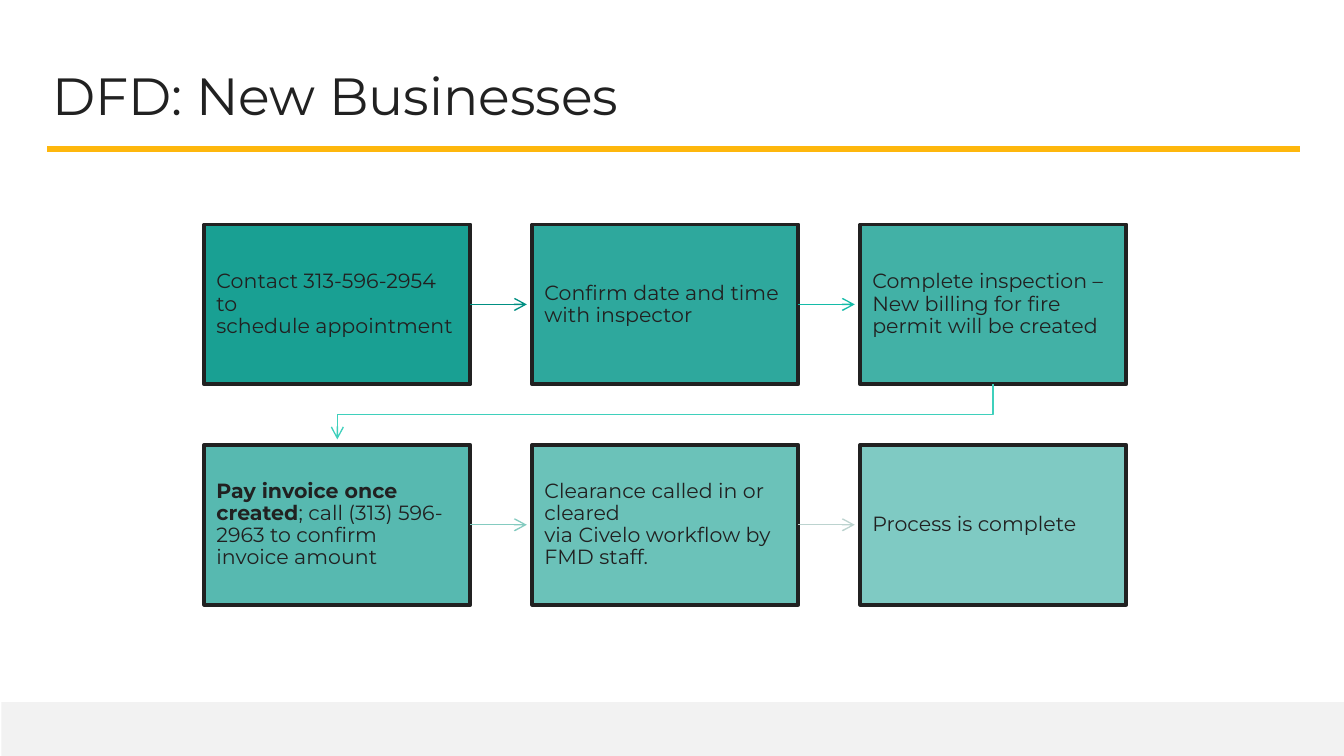
from dataclasses import dataclass

from lxml import etree
from pptx import Presentation
from pptx.dml.color import RGBColor
from pptx.enum import shapes, text
from pptx.oxml.ns import qn
from pptx import util as u

FONT = "Montserrat"
INK = "212121"
TEAL = "009688"
PAGE_WIDTH = 10
PAGE_HEIGHT = PAGE_WIDTH * 9 / 16
LEFT, TOP = 1.52, 1.67
COLUMN_STEP, ROW_STEP = 2.44, 1.64
BOX_WIDTH, BOX_HEIGHT = 1.98, 1.19
COLUMNS = 3
ARROW_GAP = 0.04
RIGHT_SIDE = 3


@dataclass(frozen=True)
class Step:
    """A process step; "~" in its words stands for a no-break space."""
    words: str
    arrow_color: str = ""
    bold_start: str = ""


STEPS = [
    Step("Contact 313-596-2954 to schedule~appointment", "008F82"),
    Step("Confirm date and time with~inspector", "14BBA8"),
    Step("Complete inspection – New billing for fire permit will be~created", "3FD0BC"),
    Step("; call (313) 596-2963 to confirm invoice~amount", "84CBC0",
         bold_start="Pay invoice once created"),
    Step("Clearance called in or cleared via~Civelo~workflow by FMD~staff.", "BCD3CF"),
    Step("Process is~complete"),
]


def rgb(color: str) -> RGBColor:
    return RGBColor.from_string(color)


def add_span(para, words: str, *, size: float, bold: bool = False) -> None:
    span = para.add_run()
    span.text = words.replace("~", chr(160))
    span.font.name = FONT
    span.font.size = u.Pt(size)
    span.font.bold = bold
    span.font.color.rgb = rgb(INK)


def set_margins(frame, inches: float) -> None:
    frame.margin_left = frame.margin_right = u.Inches(inches)
    frame.margin_top = frame.margin_bottom = u.Inches(inches)


def add_rectangle(page, left: float, top: float, width: float, height: float, color: str):
    box = page.shapes.add_shape(
        shapes.MSO_SHAPE.RECTANGLE, *map(u.Inches, (left, top, width, height)))
    box.shadow.inherit = False
    box.fill.solid()
    box.fill.fore_color.rgb = rgb(color)
    box.line.fill.background()
    return box


def add_line(page, start: tuple, end: tuple, color: str, width: float):
    line = page.shapes.add_connector(
        shapes.MSO_CONNECTOR.STRAIGHT, *map(u.Inches, start + end))
    line.line.color.rgb = rgb(color)
    line.line.width = u.Pt(width)
    etree.SubElement(line._element.spPr, qn("a:effectLst"))
    return line


def add_arrowhead(line) -> None:
    etree.SubElement(line.line._get_or_add_ln(), qn("a:tailEnd"), type="arrow")


def cell_origin(index: int) -> tuple[float, float]:
    row, column = divmod(index, COLUMNS)
    return LEFT + column * COLUMN_STEP, TOP + row * ROW_STEP


def add_step(page, index: int, step: Step):
    box = add_rectangle(page, *cell_origin(index), BOX_WIDTH, BOX_HEIGHT, TEAL)
    opacity = 90 - 8 * index
    fill_color = box._element.spPr.find(qn("a:solidFill"))[0]
    etree.SubElement(fill_color, qn("a:alpha"), val=str(opacity * 1000))
    box.line.color.rgb = rgb(INK)
    box.line.width = u.Pt(2)

    frame = box.text_frame
    frame.word_wrap = True
    frame.vertical_anchor = text.MSO_ANCHOR.MIDDLE
    set_margins(frame, 0.09)
    para = frame.paragraphs[0]
    para.alignment = text.PP_ALIGN.LEFT
    para.line_spacing = 0.9
    if step.bold_start:
        add_span(para, step.bold_start, size=11, bold=True)
    add_span(para, step.words, size=11)
    return box


def add_arrow_across(page, index: int, box, color: str) -> None:
    """Join a box to the next one in its row, stopping just short of it."""
    left, top = cell_origin(index)
    middle = top + BOX_HEIGHT / 2
    arrow = add_line(page, (left + BOX_WIDTH, middle),
                     (left + COLUMN_STEP - ARROW_GAP, middle), color, 0.75)
    arrow.begin_connect(box, RIGHT_SIDE)
    add_arrowhead(arrow)


def add_arrow_to_next_row(page, index: int, color: str) -> None:
    from_left, from_top = cell_origin(index)
    to_left, to_top = cell_origin(index + 1)
    start_x, end_x = from_left + BOX_WIDTH / 2, to_left + BOX_WIDTH / 2
    start_y = from_top + BOX_HEIGHT
    turn_y = (start_y + to_top) / 2
    corners = [(start_x, turn_y), (end_x, turn_y), (end_x, to_top - ARROW_GAP)]
    builder = page.shapes.build_freeform(u.Inches(start_x), u.Inches(start_y))
    builder.add_line_segments(
        [(u.Inches(x), u.Inches(y)) for x, y in corners], close=False)
    arrow = builder.convert_to_shape()
    arrow.shadow.inherit = False
    arrow.fill.background()
    arrow.line.color.rgb = rgb(color)
    arrow.line.width = u.Pt(0.75)
    add_arrowhead(arrow)


def add_title(page, words: str) -> None:
    title = page.shapes.title
    title.left, title.top, title.width, title.height = map(
        u.Inches, (0.29, 0.37, 9.32, 0.63))
    frame = title.text_frame
    frame.auto_size = text.MSO_AUTO_SIZE.NONE
    frame.vertical_anchor = text.MSO_ANCHOR.TOP
    set_margins(frame, 0.1)
    para = frame.paragraphs[0]
    para.alignment = text.PP_ALIGN.LEFT
    add_span(para, words, size=28)


def main() -> None:
    deck = Presentation()
    deck.slide_width, deck.slide_height = u.Inches(PAGE_WIDTH), u.Inches(PAGE_HEIGHT)
    title_only = deck.slide_layouts[5]
    page = deck.slides.add_slide(title_only)

    footer_height = 0.4
    add_rectangle(page, 0.01, PAGE_HEIGHT - footer_height, PAGE_WIDTH, footer_height, "F2F2F2")
    add_line(page, (0.35, 1.11), (9.67, 1.11), "FEB70D", 3)
    add_title(page, "DFD: New Businesses")

    for index, step in enumerate(STEPS):
        box = add_step(page, index, step)
        if not step.arrow_color:
            continue
        if (index + 1) % COLUMNS:
            add_arrow_across(page, index, box, step.arrow_color)
        else:
            add_arrow_to_next_row(page, index, step.arrow_color)

    deck.save("out.pptx")


if __name__ == "__main__":
    main()
